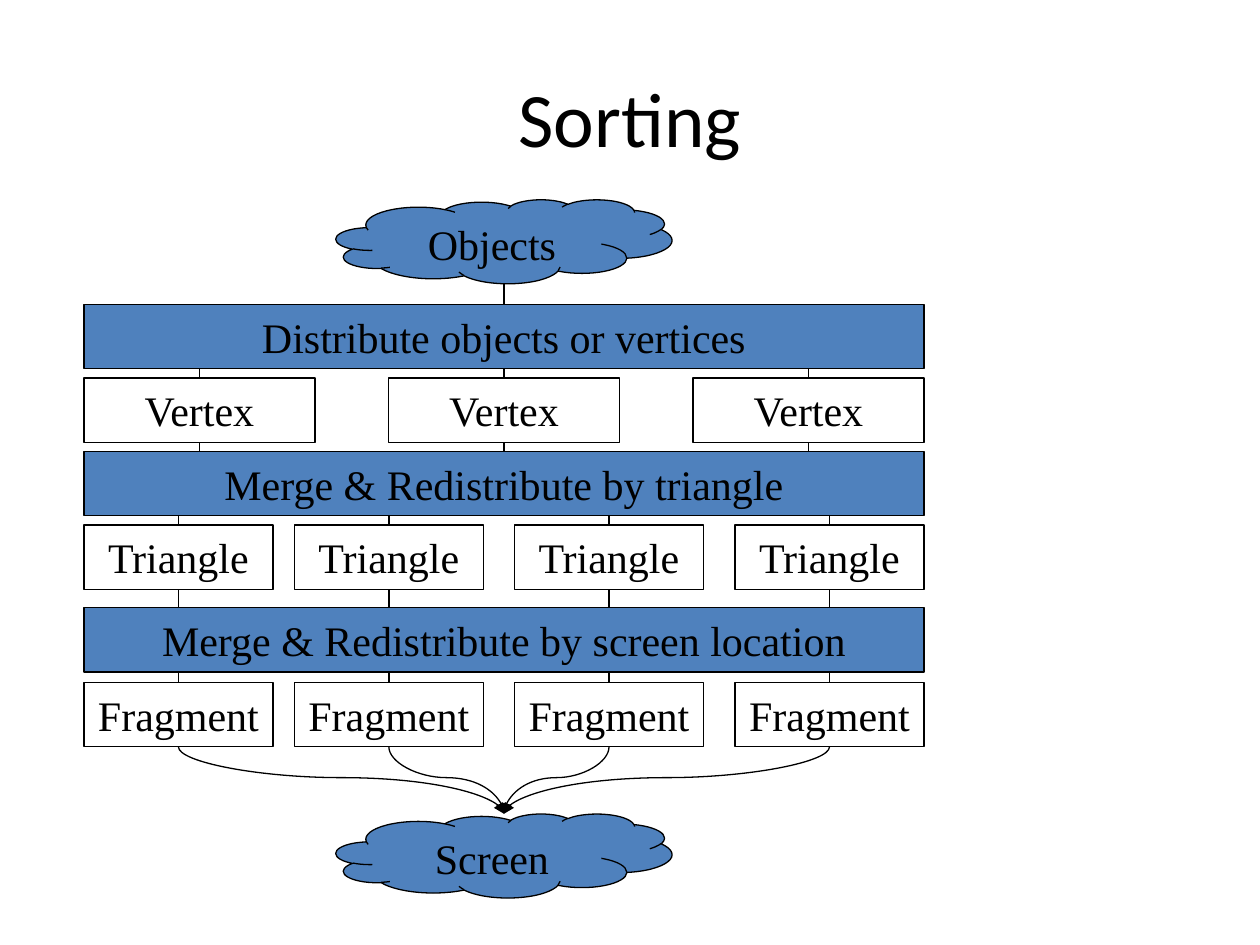
from lxml import etree
from pptx import Presentation
from pptx.dml.color import RGBColor
from pptx.enum.shapes import MSO_CONNECTOR as Link, MSO_SHAPE as Kind
from pptx.enum.text import MSO_ANCHOR as Anchor, PP_ALIGN as Align
from pptx.oxml.ns import qn
from pptx.util import Pt

BLACK, BLUE = "000000", "4F81BD"
TALL = 36.75
LEFT, WIDE = 48, 480
MID = LEFT + WIDE / 2
THIRDS = (48, 222, 396)
FOURTHS = (48, 168.25, 294, 420)
BODY = {"name": "Times New Roman", "size": Pt(24)}
HEAD = {"name": "Calibri", "size": Pt(44)}


def tint(code):
    return RGBColor.from_string(code)


def write(shape, text, font, frame):
    body = shape.text_frame
    for key, val in frame.items():
        setattr(body, key, val)
    para = body.paragraphs[0]
    para.alignment = Align.CENTER
    run = para.add_run()
    run.text = text
    for key, val in font.items():
        setattr(run.font, key, val)
    run.font.color.rgb = tint(BLACK)


def stroke(line):
    line.color.rgb = tint(BLACK)
    line.width = Pt(0.75)


def node(slide, kind, box, text, fill=None, anchor=Anchor.MIDDLE, wrap=True):
    shape = slide.shapes.add_shape(kind, *map(Pt, box))
    shape.shadow.inherit = False
    if fill:
        shape.fill.solid()
        shape.fill.fore_color.rgb = tint(fill)
    else:
        shape.fill.background()
    stroke(shape.line)
    write(shape, text, BODY, {"vertical_anchor": anchor, "word_wrap": wrap})
    return shape


def title(slide, box, text):
    shape = slide.shapes.add_textbox(*map(Pt, box))
    write(shape, text, HEAD,
          {"vertical_anchor": Anchor.MIDDLE, "word_wrap": True})


def bar(slide, top, text):
    return node(slide, Kind.RECTANGLE, (LEFT, top, WIDE, TALL), text, BLUE)


def cloud(slide, top, text):
    return node(slide, Kind.CLOUD, (MID - 96, top, 192, 48), text, BLUE,
                Anchor.TOP)


def row(slide, lefts, top, wide, text):
    return [node(slide, Kind.RECTANGLE, (x, top, wide, TALL), text, wrap=False)
            for x in lefts]


def wire(slide, kind, x1, y1, x2, y2):
    link = slide.shapes.add_connector(kind, *map(int, (x1, y1, x2, y2)))
    stroke(link.line)
    etree.SubElement(link._element.spPr, qn("a:effectLst"))
    return link


def center(shape):
    return shape.left + shape.width / 2


def drop(slide, upper, lower, x):
    """Run a straight line down at x, joined where it meets a side's middle."""
    link = wire(slide, Link.STRAIGHT, x, upper.top + upper.height, x, lower.top)
    if abs(center(upper) - x) < Pt(0.1) and upper.auto_shape_type != Kind.CLOUD:
        link.begin_connect(upper, 2)
    if abs(center(lower) - x) < Pt(0.1):
        link.end_connect(lower, 0)


def swoop(slide, upper, lower):
    """Curve down to an arrowhead, using a quarter-turned S connector."""
    x1, y1 = center(upper), upper.top + upper.height
    x2, y2 = center(lower), lower.top
    link = wire(slide, Link.CURVE, x1, y1, x2, y2)
    long, wide = y2 - y1, abs(x2 - x1)
    link.left, link.top = int((x1 + x2 - long) / 2), int((y1 + y2 - wide) / 2)
    link.width, link.height = int(long), int(wide)
    props = link._element.spPr
    turn = props.find(qn("a:xfrm"))
    turn.attrib.pop("flipH", None)
    turn.set("rot", "16200000" if x2 > x1 else "5400000")
    if x2 > x1:
        turn.set("flipH", "1")
    shape = props.find(qn("a:prstGeom"))
    guides = shape.find(qn("a:avLst"))
    if guides is None:
        guides = etree.SubElement(shape, qn("a:avLst"))
    etree.SubElement(guides, qn("a:gd"), name="adj1", fmla="val 46100")
    etree.SubElement(props.find(qn("a:ln")), qn("a:tailEnd"), type="triangle")


def flow(slide):
    spread = bar(slide, 174, "Distribute objects or vertices")
    merge = bar(slide, 258, "Merge & Redistribute by triangle")
    verts = row(slide, THIRDS, 216, 132, "Vertex")
    tris = row(slide, FOURTHS, 300, 108, "Triangle")
    frags = row(slide, FOURTHS, 390, 108, "Fragment")
    for vert in verts:
        drop(slide, spread, vert, center(vert))
        drop(slide, vert, merge, center(vert))
    for tri, frag in zip(tris, frags):
        drop(slide, merge, tri, center(tri))
        drop(slide, tri, frag, center(tri))
    source = cloud(slide, 114, "Objects")
    screen = cloud(slide, 465, "Screen")
    drop(slide, source, spread, center(source))
    for frag in frags:
        swoop(slide, frag, screen)
    bar(slide, 347.25, "Merge & Redistribute by screen location")


def main():
    deck = Presentation()
    deck.slide_width, deck.slide_height = Pt(720), Pt(540)
    slide = deck.slides.add_slide(deck.slide_layouts[6])
    title(slide, (36, 21.6, 648, 90), "Sorting")
    flow(slide)
    deck.save("out.pptx")


if __name__ == "__main__":
    main()
